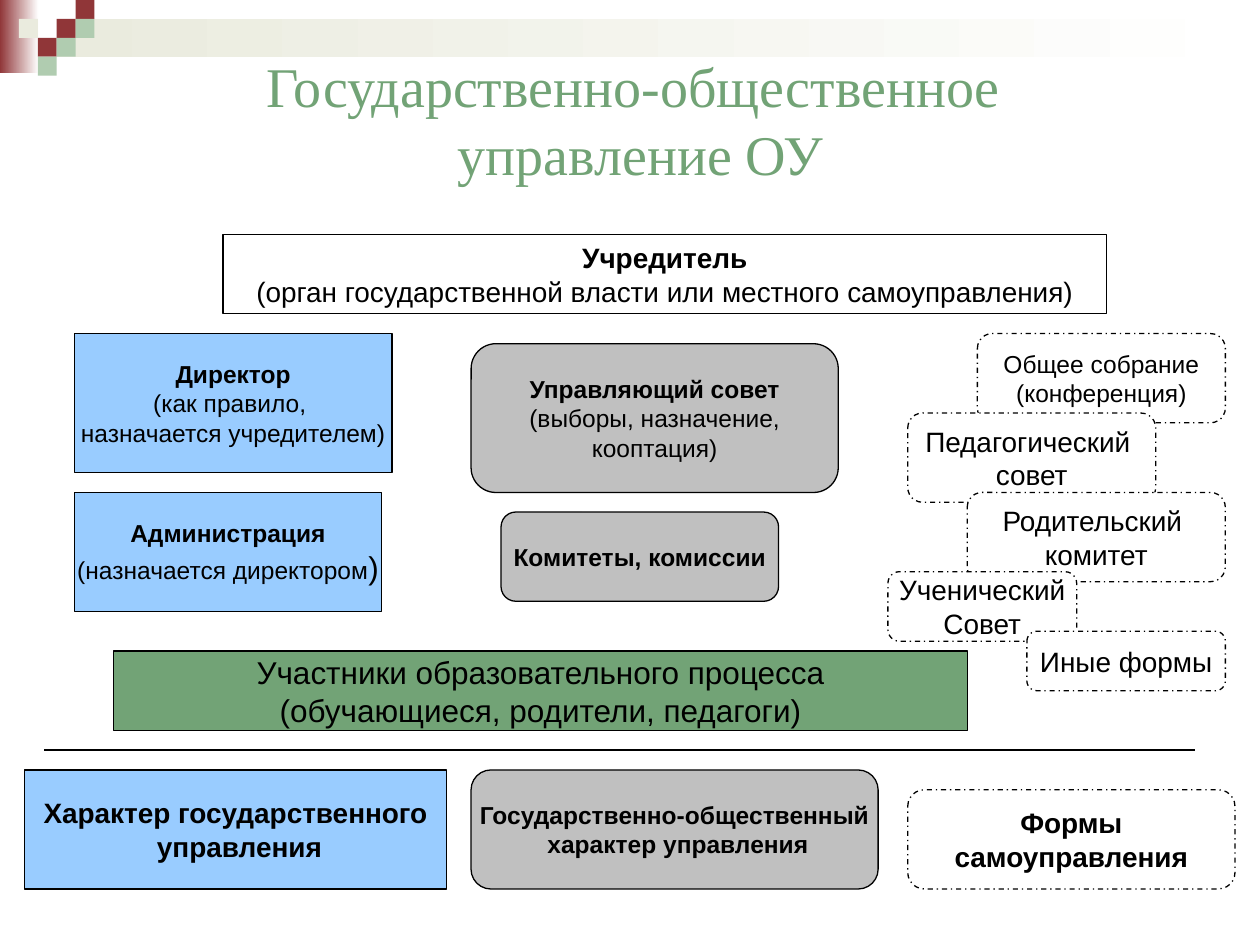
from typing import NamedTuple

from lxml.etree import SubElement
from pptx import Presentation
from pptx.dml.color import RGBColor
from pptx.enum.dml import MSO_LINE
from pptx.enum.shapes import MSO_CONNECTOR, MSO_SHAPE
from pptx.enum.text import MSO_ANCHOR, PP_ALIGN
from pptx.oxml.ns import qn
from pptx.shapes.autoshape import Shape
from pptx.slide import Slide
from pptx.text.text import TextFrame
from pptx.util import Pt

BLACK = RGBColor(0x00, 0x00, 0x00)
WHITE = RGBColor(0xFF, 0xFF, 0xFF)
BLUE = RGBColor(0x99, 0xCC, 0xFF)
GRAY = RGBColor(0xC0, 0xC0, 0xC0)
GREEN = RGBColor(0x72, 0xA3, 0x76)
PALE_GREEN = RGBColor(0xB0, 0xCC, 0xB0)
MAROON = RGBColor(0x90, 0x36, 0x38)
CREAM = RGBColor(0xEA, 0xEB, 0xDE)
TILE = 10.8


class Area(NamedTuple):
    left: float
    top: float
    width: float
    height: float


class Words(NamedTuple):
    text: str
    size: float
    bold: bool = False


class Style(NamedTuple):
    fill: RGBColor
    rounded: bool = False
    dashed: bool = False


class Box(NamedTuple):
    area: Area
    style: Style
    lines: list[list[Words]]


class Tile(NamedTuple):
    column: int
    row: int
    color: RGBColor


STATE = Style(BLUE)
COUNCIL = Style(GRAY, rounded=True)
SELF_GOVERNING = Style(WHITE, rounded=True, dashed=True)


def lines(size: float, *texts: str, bold: bool = False) -> list[list[Words]]:
    return [[Words(text, size, bold)] for text in texts]


def headed(size: float, heading: str, *texts: str) -> list[list[Words]]:
    """Bold first line, regular lines below."""
    return lines(size, heading, bold=True) + lines(size, *texts)


TILES = [
    Tile(3, 1, MAROON), Tile(4, 0, MAROON), Tile(4, 1, PALE_GREEN),
    Tile(2, 2, MAROON), Tile(1, 1, CREAM), Tile(3, 2, PALE_GREEN),
    Tile(2, 3, PALE_GREEN),
]

BOXES = [
    Box(Area(127.5, 134, 504.7, 45.2), Style(WHITE), headed(
        16, "Учредитель",
        "(орган государственной власти или местного самоуправления)")),
    Box(Area(42.5, 190.6, 181.5, 79.3), STATE, headed(
        14, "Директор", "(как правило, ", "назначается учредителем)")),
    Box(Area(42.5, 281.4, 175.7, 67.9), STATE, [
        [Words("Администрация", 14, True)],
        [Words("(назначается директором", 14), Words(")", 18)]]),
    Box(Area(269.2, 196.4, 209.8, 85), COUNCIL, headed(
        14, "Управляющий совет", "(выборы, назначение,", "кооптация)")),
    Box(Area(286.3, 292.6, 158.6, 51), COUNCIL,
        lines(14, "Комитеты, комиссии", bold=True)),
    Box(Area(558.5, 190.6, 141.7, 51), SELF_GOVERNING,
        lines(14, "Общее собрание", "(конференция)")),
    Box(Area(518.7, 236, 141.7, 51), SELF_GOVERNING,
        lines(16, "Педагогический ", "совет")),
    Box(Area(552.7, 281.4, 147.5, 51), SELF_GOVERNING,
        lines(16, "Родительский ", "комитет")),
    Box(Area(507.4, 326.7, 107.9, 39.7), SELF_GOVERNING,
        lines(16, "Ученический", "Совет")),
    Box(Area(586.8, 360.7, 113.4, 34), SELF_GOVERNING,
        lines(16, "Иные формы")),
    Box(Area(65, 372, 487.8, 45.4), Style(GREEN), lines(
        18, "Участники образовательного процесса",
        "(обучающиеся, родители, педагоги)")),
    Box(Area(14.1, 440, 241.1, 68), STATE,
        lines(16, "Характер государственного", " управления", bold=True)),
    Box(Area(269.2, 440, 232.6, 68), COUNCIL,
        lines(14, "Государственно-общественный", " характер управления", bold=True)),
    Box(Area(518.7, 451.3, 187, 56.7), SELF_GOVERNING,
        lines(16, "Формы", "самоуправления", bold=True)),
]


def add_plain_shape(slide: Slide, area: Area, rounded: bool = False) -> Shape:
    kind = MSO_SHAPE.ROUNDED_RECTANGLE if rounded else MSO_SHAPE.RECTANGLE
    shape = slide.shapes.add_shape(kind, *map(Pt, area))
    shape.shadow.inherit = False
    shape.line.fill.background()
    return shape


def add_gradient(slide: Slide, area: Area, start: RGBColor) -> None:
    fill = add_plain_shape(slide, area).fill
    fill.gradient()
    fill.gradient_angle = 0
    for stop, color in zip(fill.gradient_stops, (start, WHITE)):
        stop.color.rgb = color


def add_tile(slide: Slide, tile: Tile) -> None:
    area = Area(tile.column * TILE, tile.row * TILE, TILE, TILE)
    fill = add_plain_shape(slide, area).fill
    fill.solid()
    fill.fore_color.rgb = tile.color


def write_lines(frame: TextFrame, text_lines: list[list[Words]]) -> None:
    frame.vertical_anchor = MSO_ANCHOR.MIDDLE
    for index, line in enumerate(text_lines):
        paragraph = frame.add_paragraph() if index else frame.paragraphs[0]
        paragraph.alignment = PP_ALIGN.CENTER
        for words in line:
            run = paragraph.add_run()
            run.text = words.text
            run.font.name = "Arial"
            run.font.size = Pt(words.size)
            run.font.bold = words.bold
            run.font.color.rgb = BLACK


def add_box(slide: Slide, box: Box) -> None:
    shape = add_plain_shape(slide, box.area, box.style.rounded)
    shape.fill.solid()
    shape.fill.fore_color.rgb = box.style.fill
    shape.line.color.rgb = BLACK
    shape.line.width = Pt(0.75)
    if box.style.dashed:
        shape.line.dash_style = MSO_LINE.DASH_DOT
    shape.text_frame.word_wrap = False
    write_lines(shape.text_frame, box.lines)


def add_title(slide: Slide) -> None:
    frame = slide.shapes.add_textbox(Pt(54), Pt(26), Pt(624), Pt(84.2)).text_frame
    frame.word_wrap = True
    frame.vertical_anchor = MSO_ANCHOR.MIDDLE
    paragraph = frame.paragraphs[0]
    paragraph.alignment = PP_ALIGN.CENTER
    for index, text in enumerate(("Государственно-общественное ", "управление ОУ")):
        if index:
            paragraph.add_line_break()
        run = paragraph.add_run()
        run.text = text
        run.font.name = "Times New Roman"
        run.font.size = Pt(32)
        run.font.color.rgb = GREEN


def add_divider(slide: Slide) -> None:
    divider = slide.shapes.add_connector(
        MSO_CONNECTOR.STRAIGHT, Pt(25.4), Pt(428.6), Pt(683), Pt(428.6))
    divider.line.color.rgb = BLACK
    divider.line.width = Pt(0.75)
    SubElement(divider.element.spPr, qn("a:effectLst"))


def main() -> None:
    presentation = Presentation()
    presentation.slide_width, presentation.slide_height = Pt(720), Pt(540)
    slide = presentation.slides.add_slide(presentation.slide_layouts[6])
    add_gradient(slide, Area(0, 0, 22, 41.8), MAROON)
    add_gradient(slide, Area(3 * TILE, TILE, 687.6, 2 * TILE), CREAM)
    for tile in TILES:
        add_tile(slide, tile)
    add_title(slide)
    for box in BOXES:
        add_box(slide, box)
    add_divider(slide)
    presentation.save("out.pptx")


if __name__ == "__main__":
    main()
